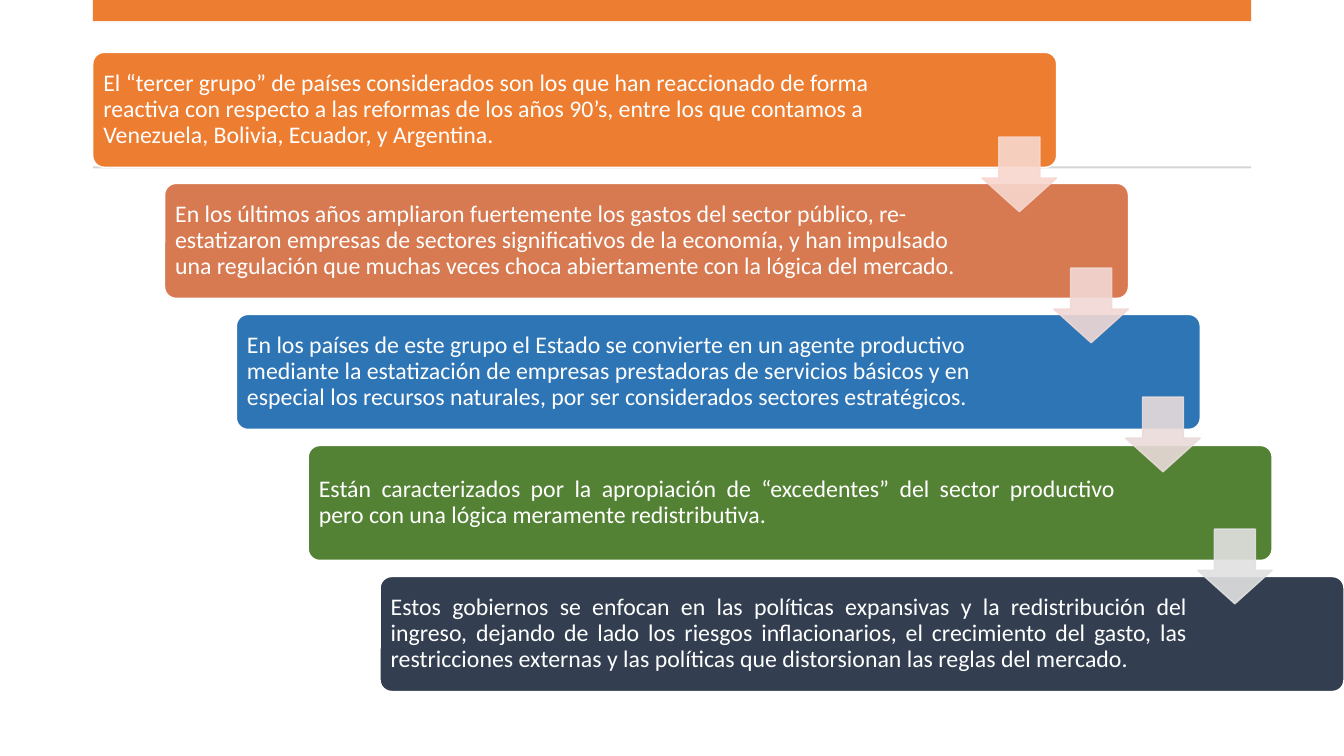
from dataclasses import dataclass

from lxml import etree
from pptx import Presentation
from pptx import util as u
from pptx.dml.color import RGBColor
from pptx.enum import shapes, text
from pptx.oxml import ns

COLORS = {
    "white": "FFFFFF",
    "orange": "ED7D31",
    "rule": "D5D5D5",
    "terracotta": "D87A51",
    "blue": "2E75B6",
    "green": "548235",
    "navy": "333F50",
    "arrow_peach": "F8D7CE",
    "arrow_pink": "F1D8D4",
    "arrow_rose": "E9DBDA",
    "arrow_gray": "E1E1E1",
}

# Staircase geometry, in inches
CARD_LEFT, CARD_TOP = 0.92, 0.52
CARD_WIDTH, CARD_HEIGHT = 9.56, 1.14
STEP_X, STEP_Y = 2.85 / 4, 1.3
TEXT_OFFSET, TEXT_HEIGHT, TEXT_INSET = 0.035, 1.07, 0.07
ARROW_SIZE = 0.74


@dataclass
class Card:
    message: str
    color: str
    text_width: float = 8.04
    alignment: text.PP_ALIGN = text.PP_ALIGN.LEFT


@dataclass
class Arrow:
    top: float
    color: str


CARDS = [
    Card("El “tercer grupo” de países considerados son los que han reaccionado de forma "
         "reactiva con respecto a las reformas de los años 90’s, entre los que contamos a "
         "Venezuela, Bolivia, Ecuador, y Argentina.", "orange", text_width=8.2),
    Card("En los últimos años ampliaron fuertemente los gastos del sector público, "
         "re-estatizaron empresas de sectores significativos de la economía, y han impulsado "
         "una regulación que muchas veces choca abiertamente con la lógica del mercado.",
         "terracotta"),
    Card("En los países de este grupo el Estado se convierte en un agente productivo "
         "mediante la estatización de empresas prestadoras de servicios básicos y en "
         "especial los recursos naturales, por ser considerados sectores estratégicos.",
         "blue"),
    Card("Están caracterizados por la apropiación de “excedentes” del sector productivo "
         "pero con una lógica meramente redistributiva.",
         "green", alignment=text.PP_ALIGN.JUSTIFY),
    Card("Estos gobiernos se enfocan en las políticas expansivas y la redistribución del "
         "ingreso, dejando de lado los riesgos inflacionarios, el crecimiento del gasto, las "
         "restricciones externas y las políticas que distorsionan las reglas del mercado.",
         "navy", alignment=text.PP_ALIGN.JUSTIFY),
]

ARROWS = [
    Arrow(1.36, "arrow_peach"),
    Arrow(2.66, "arrow_pink"),
    Arrow(3.94, "arrow_rose"),
    Arrow(5.25, "arrow_gray"),
]


def rgb(name: str) -> RGBColor:
    return RGBColor.from_string(COLORS[name])


def add_filled_shape(slide, kind: shapes.MSO_SHAPE, left: float, top: float,
                     width: float, height: float, fill: str, line: str | None = None):
    shape = slide.shapes.add_shape(kind, u.Inches(left), u.Inches(top),
                                   u.Inches(width), u.Inches(height))
    shape.shadow.inherit = False
    shape.fill.solid()
    shape.fill.fore_color.rgb = rgb(fill)
    if line:
        shape.line.color.rgb = rgb(line)
        shape.line.width = u.Pt(1)
    else:
        shape.line.fill.background()
    return shape


def set_opacity(shape, percent: int) -> None:
    for color in shape._element.spPr.iter(ns.qn("a:srgbClr")):
        etree.SubElement(color, ns.qn("a:alpha"), val=str(percent * 1000))


def add_card(slide, index: int, card: Card) -> None:
    left, top = CARD_LEFT + index * STEP_X, CARD_TOP + index * STEP_Y
    panel = add_filled_shape(slide, shapes.MSO_SHAPE.ROUNDED_RECTANGLE, left, top,
                             CARD_WIDTH, CARD_HEIGHT, card.color, "white")
    panel.adjustments[0] = 0.1

    box = slide.shapes.add_textbox(u.Inches(left + TEXT_OFFSET), u.Inches(top + TEXT_OFFSET),
                                   u.Inches(card.text_width), u.Inches(TEXT_HEIGHT))
    frame = box.text_frame
    frame.word_wrap = True
    frame.vertical_anchor = text.MSO_ANCHOR.MIDDLE
    frame.margin_left = frame.margin_right = u.Inches(TEXT_INSET)
    frame.margin_top = frame.margin_bottom = u.Inches(TEXT_INSET)
    paragraph = frame.paragraphs[0]
    paragraph.text = card.message
    paragraph.alignment = card.alignment
    paragraph.line_spacing = 0.9
    paragraph.font.name = "Calibri"
    paragraph.font.size = u.Pt(17)
    paragraph.font.color.rgb = rgb("white")


def add_arrow(slide, index: int, arrow: Arrow) -> None:
    # Each arrow is flush with the right edge of the card it leaves
    left = CARD_LEFT + index * STEP_X + CARD_WIDTH - ARROW_SIZE
    shape = add_filled_shape(slide, shapes.MSO_SHAPE.DOWN_ARROW, left, arrow.top,
                             ARROW_SIZE, ARROW_SIZE, arrow.color, arrow.color)
    # Preset order: head length first, then shaft width
    shape.adjustments[0] = 0.55
    shape.adjustments[1] = 0.45
    set_opacity(shape, 90)


def main() -> None:
    presentation = Presentation()
    presentation.slide_width = u.Inches(13.33)
    presentation.slide_height = u.Inches(7.5)
    slide = presentation.slides.add_slide(presentation.slide_layouts[6])

    # Top band and thin rule
    add_filled_shape(slide, shapes.MSO_SHAPE.RECTANGLE, CARD_LEFT, 0, 11.49, 0.21, "orange")
    add_filled_shape(slide, shapes.MSO_SHAPE.RECTANGLE, CARD_LEFT, 1.65, 11.49, 0.02, "rule")

    # Staircase of cards, with the arrows in front
    for index, card in enumerate(CARDS):
        add_card(slide, index, card)
    for index, arrow in enumerate(ARROWS):
        add_arrow(slide, index, arrow)

    presentation.save("out.pptx")


if __name__ == "__main__":
    main()
